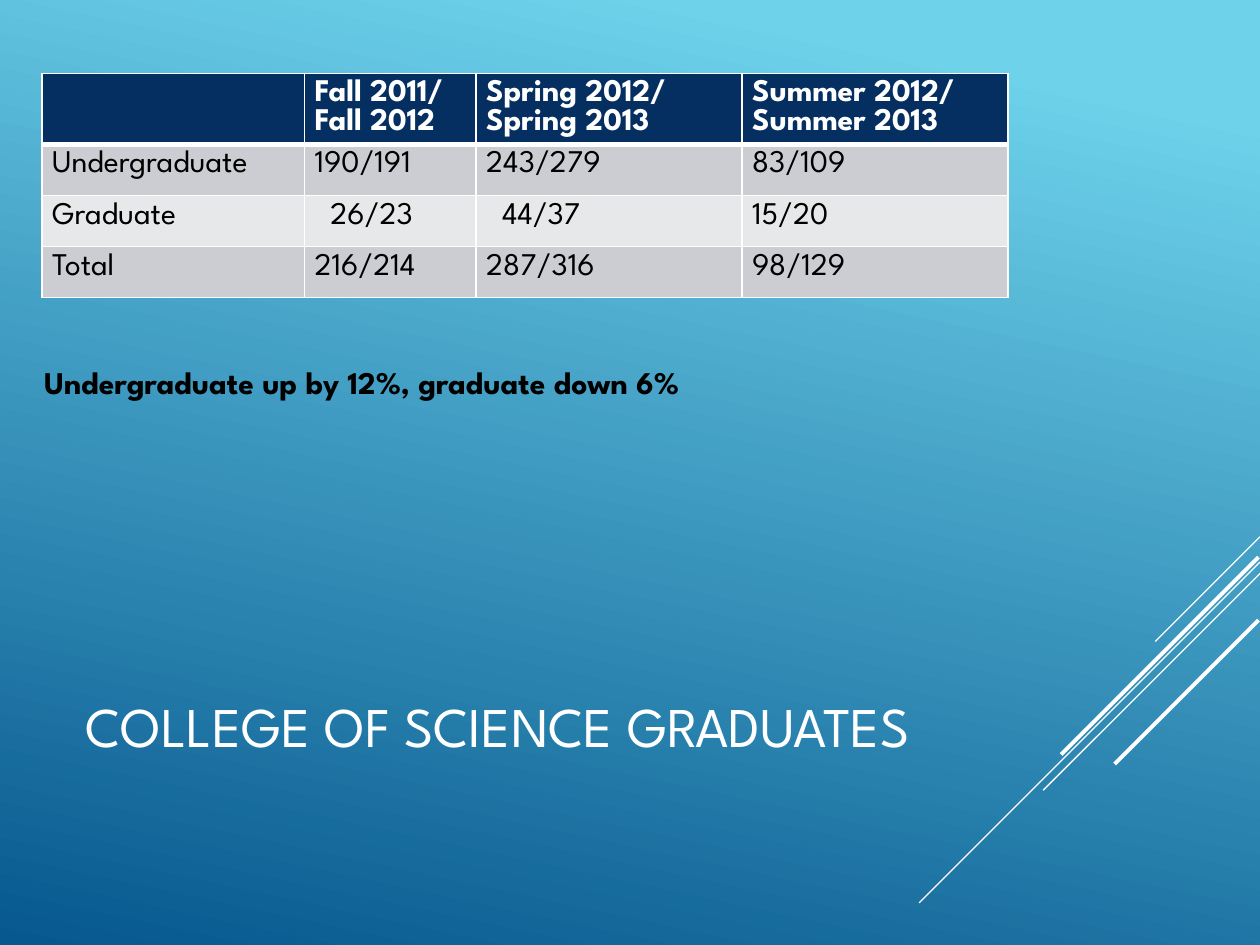
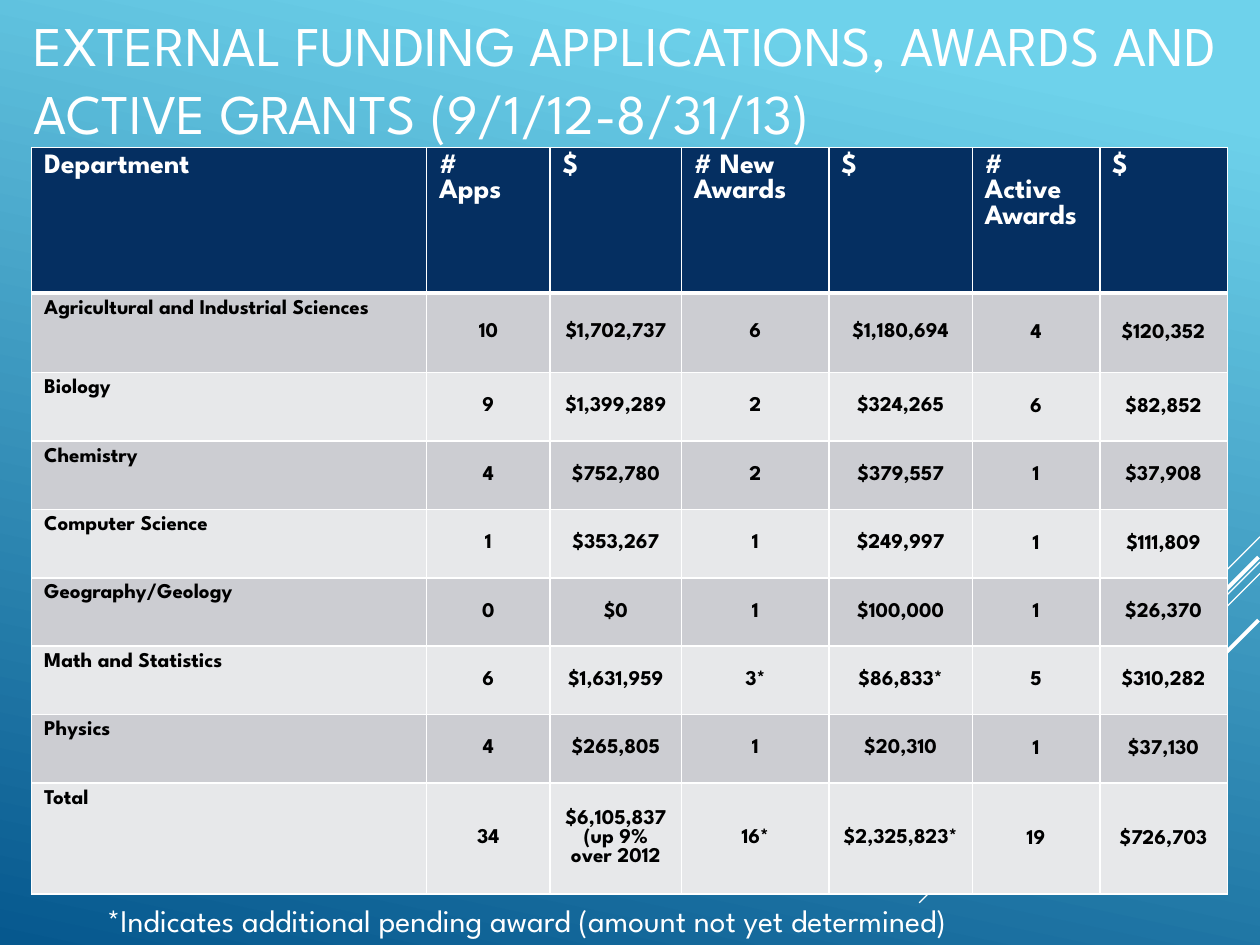
from lxml import etree
from pptx import Presentation
from pptx import util as u
from pptx.dml import color
from pptx.enum import shapes, text
from pptx.oxml import ns

FONT = "League Spartan"
COLORS = {
    "sky": "6ED2EB", "ocean": "06588E", "navy": "052F61",
    "band_dark": "CCCDD2", "band_light": "E7E8EA",
    "white": "FFFFFF", "black": "000000",
}

# Diagonal accents at 45 degrees: right end x, y, run (cm), width (pt)
ACCENTS = [
    (25.4, 10.82, 2.11, 0.75),
    (25.4, 11.33, 6.87, 0.75),
    (25.4, 11.56, 4.37, 0.75),
    (25.37, 11.23, 3.98, 2.25),
    (25.37, 12.5, 2.9, 2.25),
]

# Slide content; every length is in centimetres
SLIDES = [
    {
        "title": "COLLEGE OF SCIENCE GRADUATES",
        "title_box": (1.47, 12.5, 18.21, 4.24),
        "table": {
            "at": (0.85, 1.48),
            "columns": [5.29, 3.46, 5.36, 5.36],
            "rows": [1.03] * 4,
            "header_size": 18, "body_size": 18, "body_bold": False,
            "centred_from": None, "tight_from": None, "side_inset": 0.2,
            "indents": {(2, 1): 0.32, (2, 2): 0.32},
            "cells": [
                ["", "Fall 2011/\nFall 2012", "Spring 2012/\nSpring 2013",
                 "Summer 2012/\nSummer 2013"],
                ["Undergraduate", "190/191", "243/279", "83/109"],
                ["Graduate", "26/23", "44/37", "15/20"],
                ["Total", "216/214", "287/316", "98/129"],
            ],
        },
        "note": ("Undergraduate up by 12%, graduate down 6%", "black", True),
        "note_box": (0.64, 7.19, 14.86, 1.02),
    },
    {
        "title": "EXTERNAL FUNDING APPLICATIONS, AWARDS AND "
                 "ACTIVE GRANTS (9/1/12-8/31/13)",
        "title_box": (0.43, -0.43, 24.97, 4.01),
        "table": {
            "at": (0.64, 2.97),
            "columns": [7.96, 2.49, 2.65, 2.97, 2.89, 2.57, 2.57],
            "rows": [2.94, 1.6] + [1.38] * 6 + [2.24],
            "header_size": 16, "body_size": 12, "body_bold": True,
            "centred_from": 1, "tight_from": 5, "side_inset": 0.25,
            "indents": {},
            "cells": [
                ["Department", "#\nApps", "$", "# New Awards", "$",
                 "# Active Awards", "$"],
                ["Agricultural and Industrial Sciences", "10", "$1,702,737",
                 "6", "$1,180,694", "4", "$120,352"],
                ["Biology", "9", "$1,399,289", "2", "$324,265", "6", "$82,852"],
                ["Chemistry", "4", "$752,780", "2", "$379,557", "1", "$37,908"],
                ["Computer Science", "1", "$353,267", "1", "$249,997", "1",
                 "$111,809"],
                ["Geography/Geology", "0", "$0", "1", "$100,000", "1",
                 "$26,370"],
                ["Math and Statistics", "6", "$1,631,959", "3*", "$86,833*",
                 "5", "$310,282"],
                ["Physics", "4", "$265,805", "1", "$20,310", "1", "$37,130"],
                ["Total", "34", "$6,105,837\n(up 9% over 2012", "16*",
                 "$2,325,823*", "19", "$726,703"],
            ],
        },
        "note": ("*Indicates additional pending award "
                 "(amount not yet determined)", "white", False),
        "note_box": (1.91, 18.03, 21.34, 1.02),
    },
]


def rgb(name):
    return color.RGBColor.from_string(COLORS[name])


def cm(values):
    return [u.Cm(value) for value in values]


def add_run(paragraph, words, size, color_name, bold=False):
    run = paragraph.add_run()
    run.text = words
    run.font.name = FONT
    run.font.size = u.Pt(size)
    run.font.bold = bold
    run.font.color.rgb = rgb(color_name)


def paint_background(master):
    fill = master.background.fill
    fill.gradient()
    fill.gradient_angle = 360 - 102
    for stop, position, name in zip(fill.gradient_stops, (0.1, 1), ("sky", "ocean")):
        stop.position = position
        stop.color.rgb = rgb(name)


def add_accents(slide, layout):
    """Draw the diagonals, then move them to the layout that the slides share."""
    for x, y, run, width in ACCENTS:
        connector = slide.shapes.add_connector(
            shapes.MSO_CONNECTOR.STRAIGHT, *cm((x, y, x - run, y + run)))
        connector.line.color.rgb = rgb("white")
        connector.line.width = u.Pt(width)
        etree.SubElement(connector.element.spPr, ns.qn("a:effectLst"))
        layout.shapes.element.append(connector.element)


def add_title(slide, words, box):
    title = slide.shapes.title
    title.left, title.top, title.width, title.height = cm(box)
    frame = title.text_frame
    frame.vertical_anchor = text.MSO_ANCHOR.MIDDLE
    frame.auto_size = text.MSO_AUTO_SIZE.NONE
    paragraph = frame.paragraphs[0]
    paragraph.alignment = text.PP_ALIGN.LEFT
    add_run(paragraph, words, 32, "white")


def set_borders(cell, row):
    widths = {"lnL": 1, "lnR": 1, "lnT": 3 if row == 1 else 1,
              "lnB": 3 if row == 0 else 1}
    properties = cell._tc.get_or_add_tcPr()
    for side, width in widths.items():
        line = etree.SubElement(properties, ns.qn(f"a:{side}"), w=str(u.Pt(width)))
        fill = etree.SubElement(line, ns.qn("a:solidFill"))
        etree.SubElement(fill, ns.qn("a:srgbClr"), val=COLORS["white"])


def fill_cell(cell, row, column, words, data):
    header = row == 0
    body_from = lambda first: not header and first is not None and column >= first
    centred, tight = body_from(data["centred_from"]), body_from(data["tight_from"])

    # Borders, fill and margins
    set_borders(cell, row)
    cell.fill.solid()
    band = "band_dark" if row % 2 else "band_light"
    cell.fill.fore_color.rgb = rgb("navy" if header else band)
    cell.margin_left = cell.margin_right = u.Cm(0.02 if tight else data["side_inset"])
    cell.margin_top = u.Cm(0.02 if tight else 0.13)
    cell.margin_bottom = u.Cm(0 if tight else 0.13)
    cell.vertical_anchor = text.MSO_ANCHOR.MIDDLE if centred else text.MSO_ANCHOR.TOP

    # Words
    frame = cell.text_frame
    for index, line in enumerate(words.split("\n") if words else []):
        paragraph = frame.add_paragraph() if index else frame.paragraphs[0]
        paragraph.alignment = text.PP_ALIGN.CENTER if centred else text.PP_ALIGN.LEFT
        if (row, column) in data["indents"]:
            indent = u.Cm(data["indents"][row, column])
            paragraph._p.get_or_add_pPr().set("marL", str(indent))
        add_run(paragraph, line,
                data["header_size"] if header else data["body_size"],
                "white" if header else "black", header or data["body_bold"])


def add_data_table(slide, data):
    columns, rows = data["columns"], data["rows"]
    table = slide.shapes.add_table(
        len(rows), len(columns), *cm((*data["at"], sum(columns), sum(rows)))).table
    for column, width in zip(table.columns, columns):
        column.width = u.Cm(width)
    for row, height in zip(table.rows, rows):
        row.height = u.Cm(height)
    for row, line in enumerate(data["cells"]):
        for column, words in enumerate(line):
            fill_cell(table.cell(row, column), row, column, words, data)


def add_note(slide, note, box):
    words, color_name, bold = note
    frame = slide.shapes.add_textbox(*cm(box)).text_frame
    frame.word_wrap = False
    frame.auto_size = text.MSO_AUTO_SIZE.SHAPE_TO_FIT_TEXT
    add_run(frame.paragraphs[0], words, 18, color_name, bold)


def main():
    presentation = Presentation()
    presentation.slide_width, presentation.slide_height = cm((25.4, 19.05))
    paint_background(presentation.slide_master)
    layout = presentation.slide_layouts.get_by_name("Title Only")

    for number, content in enumerate(SLIDES):
        slide = presentation.slides.add_slide(layout)
        if number == 0:
            add_accents(slide, layout)
        add_title(slide, content["title"], content["title_box"])
        add_data_table(slide, content["table"])
        add_note(slide, content["note"], content["note_box"])

    presentation.save("out.pptx")


if __name__ == "__main__":
    main()
